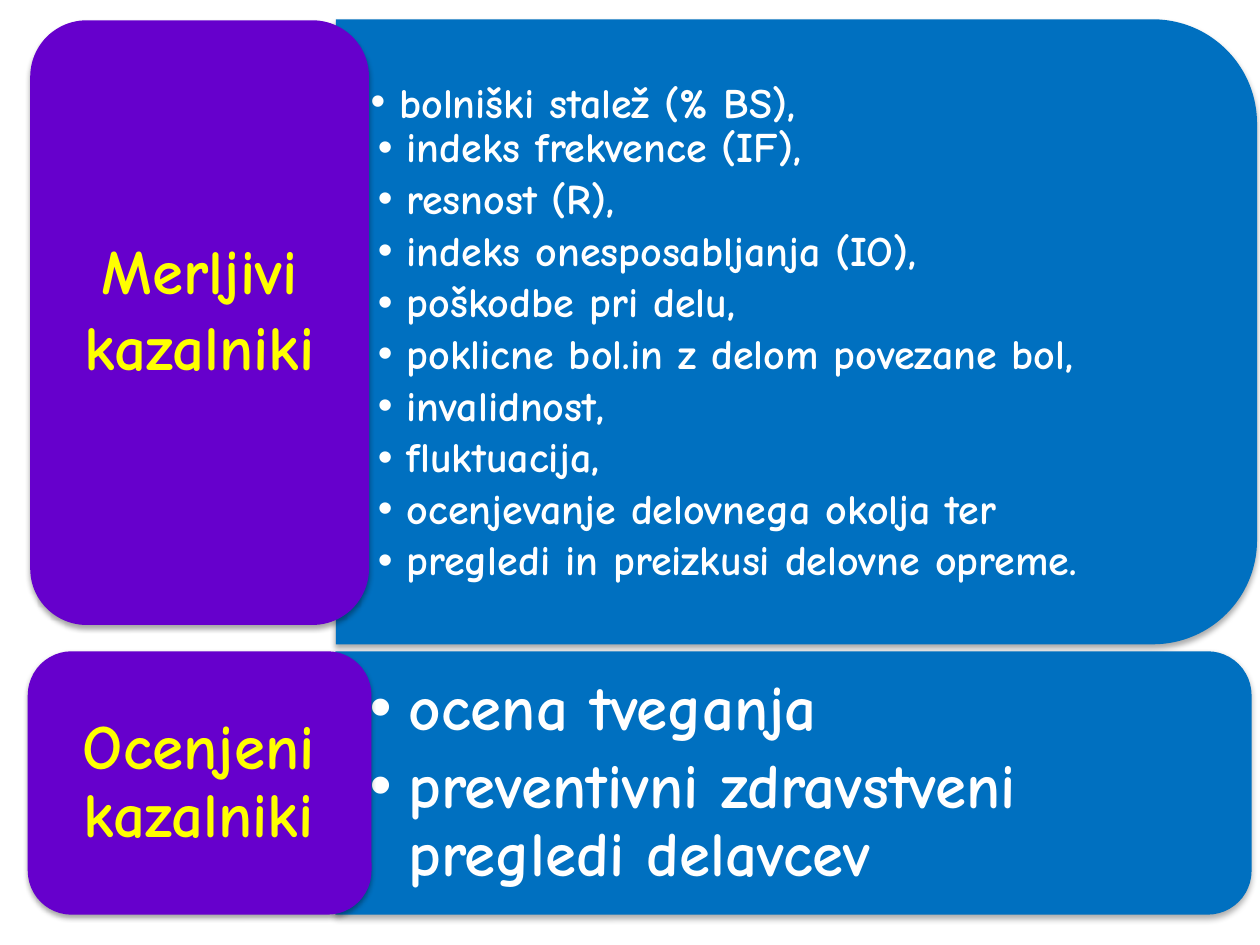
from typing import NamedTuple

from lxml import etree
from pptx import Presentation
from pptx.dml.color import RGBColor
from pptx.enum.shapes import MSO_SHAPE
from pptx.enum.text import MSO_ANCHOR, PP_ALIGN
from pptx.oxml.ns import qn
from pptx.util import Cm, Pt

ROUND = MSO_SHAPE.ROUNDED_RECTANGLE
TAB = MSO_SHAPE.ROUND_2_SAME_RECTANGLE
MIDDLE = MSO_ANCHOR.MIDDLE
LEFT, CENTER = PP_ALIGN.LEFT, PP_ALIGN.CENTER
FONT = "Comic Neue"
COLORS = {"blue": "0070C0", "purple": "6600CC", "white": "FFFFFF",
          "yellow": "FFFF00", "black": "000000"}


class Box(NamedTuple):
    """Left, top, width and height in centimetres."""
    x: float
    y: float
    w: float
    h: float


class Item(NamedTuple):
    text: str
    indent: float = 0
    spacing: float = 0.9
    after: float = 0


class Group(NamedTuple):
    panel: Box
    body: Box
    items: list[Item]
    size: float
    hang: float
    label: Box
    title_box: Box
    title: Item
    foot: float


MEASURES = ["indeks frekvence (IF),", "resnost (R),",
            "indeks onesposabljanja (IO),", "poškodbe pri delu,",
            "poklicne bol.in z delom povezane bol,", "invalidnost,",
            "fluktuacija,", "ocenjevanje delovnega okolja ter",
            "pregledi in preizkusi delovne opreme."]
RATINGS = ["ocena tveganja", "preventivni zdravstveni pregledi delavcev"]

GROUPS = [
    Group(panel=Box(6.77, 0.39, 18.57, 12.6), body=Box(6.78, 0.99, 17.93, 11.35),
          items=[Item("bolniški stalež (% BS),", spacing=1)]
          + [Item(text, indent=0.15, after=3.6) for text in MEASURES],
          size=24, hang=0.58,
          label=Box(0.61, 0.41, 6.83, 12.19), title_box=Box(0.94, 0.74, 6.17, 11.53),
          title=Item("Merljivi kazalniki", spacing=1), foot=0.79),
    Group(panel=Box(6.76, 13.13, 18.47, 5.31), body=Box(6.76, 13.39, 18.21, 4.8),
          items=[Item(text, after=5.4) for text in RATINGS],
          size=36, hang=0.79,
          label=Box(0.56, 13.13, 6.93, 5.31), title_box=Box(0.81, 13.39, 6.4, 4.78),
          title=Item("Ocenjeni kazalniki"), foot=0.18),
]


def add_shade(shape, alpha: int, blur: float, dist: float) -> None:
    """Give the shape a soft shadow that falls straight down."""
    shape.shadow.inherit = False
    effects = shape._element.spPr.find(qn("a:effectLst"))
    shade = etree.SubElement(effects, qn("a:outerShdw"), blurRad=str(Pt(blur)),
                             dist=str(Pt(dist)), dir="5400000", rotWithShape="0")
    color = etree.SubElement(shade, qn("a:srgbClr"), val=COLORS["black"])
    etree.SubElement(color, qn("a:alpha"), val=str(alpha * 1000))


def add_block(slide, kind, box: Box, color: str, turn: bool = False):
    """Draw a filled shape; a turned one still covers the given box."""
    x, y, w, h = box
    if turn:
        x, y, w, h = x + (w - h) / 2, y + (h - w) / 2, h, w
    shape = slide.shapes.add_shape(kind, Cm(x), Cm(y), Cm(w), Cm(h))
    shape.rotation = 90 if turn else 0
    shape.fill.solid()
    shape.fill.fore_color.rgb = RGBColor.from_string(COLORS[color])
    shape.line.fill.background()
    return shape


def add_bullet(para, indent: float, hang: float) -> None:
    props = para._p.get_or_add_pPr()
    props.set("marL", str(Cm(indent + hang)))
    props.set("indent", str(-Cm(hang)))
    etree.SubElement(props, qn("a:buFont"), typeface="Arial")
    etree.SubElement(props, qn("a:buChar"), char="•")


def add_text(slide, box: Box, items: list[Item], *, size: float, color: str,
             align=LEFT, side: float, edge: float, foot: float,
             hang: float = 0) -> None:
    """Write one paragraph per item, with bullets when hang is given."""
    frame = slide.shapes.add_textbox(*map(Cm, box)).text_frame
    frame.word_wrap = True
    frame.vertical_anchor = MIDDLE
    frame.margin_left = frame.margin_right = Cm(side)
    frame.margin_top, frame.margin_bottom = Cm(edge), Cm(foot)
    for i, item in enumerate(items):
        para = frame.add_paragraph() if i else frame.paragraphs[0]
        para.alignment = align
        para.line_spacing = item.spacing
        para.space_after = Pt(item.after)
        if hang:
            para.level = 1
            add_bullet(para, item.indent, hang)
        run = para.add_run()
        run.text = item.text
        font = run.font
        font.name, font.size, font.bold = FONT, Pt(size), True
        font.color.rgb = RGBColor.from_string(COLORS[color])


def add_group(slide, group: Group) -> None:
    panel = add_block(slide, TAB, group.panel, "blue", turn=True)
    add_shade(panel, 32, 3.5, 2.2)
    add_text(slide, group.body, group.items, size=group.size, color="white",
             side=0.69, edge=0.36, foot=0.36, hang=group.hang)
    label = add_block(slide, ROUND, group.label, "purple")
    add_shade(label, 35, 3.1, 1.8)
    add_text(slide, group.title_box, [group.title], size=36, color="yellow",
             align=CENTER, side=0.38, edge=0.18, foot=group.foot)


def main() -> None:
    deck = Presentation()
    deck.slide_width, deck.slide_height = Cm(25.4), Cm(19.05)
    slide = deck.slides.add_slide(deck.slide_layouts[6])
    for group in GROUPS:
        add_group(slide, group)
    deck.save("out.pptx")


if __name__ == "__main__":
    main()
